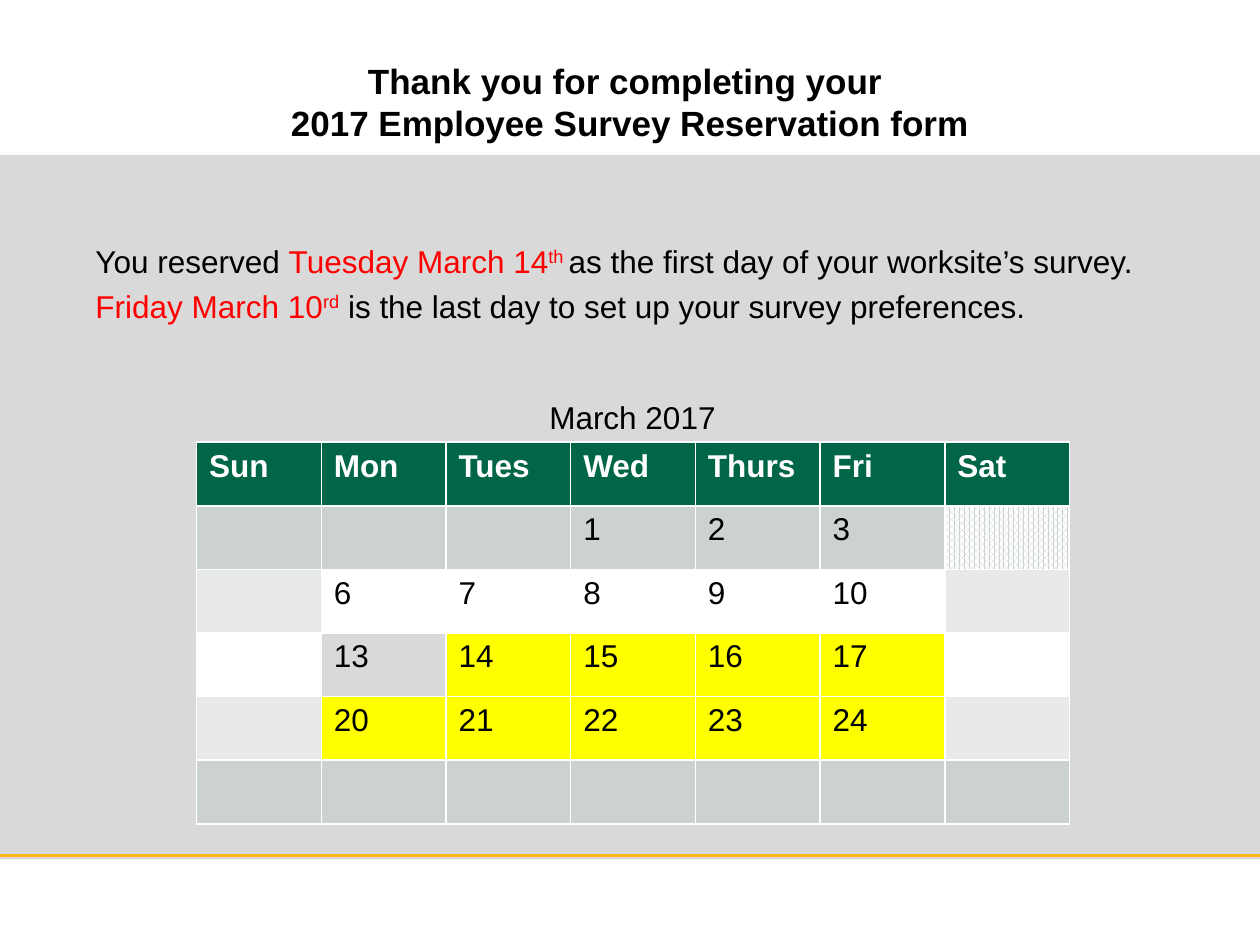
import pptx
import pptx.util
import pptx.dml.color
import pptx.enum.dml
import pptx.enum.shapes
import pptx.enum.text
from dataclasses import dataclass
from lxml import etree

Pt = pptx.util.Pt
Align = pptx.enum.text.PP_ALIGN
Anchor = pptx.enum.text.MSO_ANCHOR


@dataclass(frozen=True)
class Theme:
    font: str = "Arial"
    head: int = 20
    body: int = 18
    black: str = "000000"
    white: str = "FFFFFF"
    red: str = "FF0000"
    gray: str = "D9D9D9"
    gold: str = "FFB819"
    green: str = "016647"
    sage: str = "CCD3CF"
    pale: str = "E7EAE9"
    yellow: str = "FFFF00"


def rgb(color):
    return pptx.dml.color.RGBColor.from_string(color)


class Page:
    """A slide on a grid of 100 columns by 75 rows."""

    def __init__(self, deck, theme):
        self.theme = theme
        self.unit = deck.slide_width / 100
        self.slide = deck.slides.add_slide(deck.slide_layouts[5])
        self.shapes = self.slide.shapes

    def grid(self, *cells):
        return [round(cell * self.unit) for cell in cells]

    def style(self, para, size, color, bold=False, align=None):
        font = para.font
        font.name, font.size, font.bold = self.theme.font, Pt(size), bold
        font.color.rgb = rgb(color)
        para.alignment = align

    def title(self, text, *area):
        box = self.shapes.title
        box.left, box.top, box.width, box.height = self.grid(*area)
        frame = box.text_frame
        frame.text = text
        frame.auto_size = pptx.enum.text.MSO_AUTO_SIZE.NONE
        frame.vertical_anchor = Anchor.BOTTOM
        self.style(frame.paragraphs[0], self.theme.head, self.theme.black,
                   True, Align.CENTER)

    def panel(self, color, *area):
        kind = pptx.enum.shapes.MSO_SHAPE.RECTANGLE
        box = self.shapes.add_shape(kind, *self.grid(*area))
        box.shadow.inherit = False
        box.fill.solid()
        box.fill.fore_color.rgb = rgb(color)
        box.line.fill.background()

    def rule(self, color, width, *ends):
        kind = pptx.enum.shapes.MSO_CONNECTOR.STRAIGHT
        line = self.shapes.add_connector(kind, *self.grid(*ends))
        line.line.color.rgb = rgb(color)
        line.line.width = Pt(width)
        etree.SubElement(line._element.spPr, pptx.oxml.ns.qn("a:effectLst"))

    def text(self, paras, *area, align=None, inset=1, gap=0):
        """Each paragraph is a list of (text, color, raised) runs."""
        frame = self.shapes.add_textbox(*self.grid(*area)).text_frame
        frame.word_wrap = True
        frame.margin_left, frame.margin_right = self.grid(inset, inset)
        for i, runs in enumerate(paras):
            para = frame.add_paragraph() if i else frame.paragraphs[0]
            if i:
                para.space_before = Pt(gap)
            self.style(para, self.theme.body, self.theme.black, align=align)
            for words, color, raised in runs:
                run = para.add_run()
                run.text = words
                run.font.color.rgb = rgb(color)
                if raised:
                    run.font._element.set("baseline", "30000")

    def table(self, rows, fills, *area):
        grid = self.shapes.add_table(len(rows), len(rows[0]),
                                     *self.grid(*area)).table
        for r, row in enumerate(rows):
            for c, words in enumerate(row):
                cell = grid.cell(r, c)
                cell.text = words
                color = self.theme.black if r else self.theme.white
                self.style(cell.text_frame.paragraphs[0], self.theme.body,
                           color, bold=r == 0)
                self.paint(cell.fill, fills[r][c])

    def paint(self, fill, color):
        if color is None:
            fill.background()
        elif color == "dots":
            fill.patterned()
            fill.pattern = pptx.enum.dml.MSO_PATTERN.PERCENT_75
            fill.fore_color.rgb = rgb(self.theme.sage)
            fill.back_color.rgb = rgb(self.theme.white)
        else:
            fill.solid()
            fill.fore_color.rgb = rgb(color)


def main():
    deck = pptx.Presentation()
    deck.slide_width = pptx.util.Inches(10)
    deck.slide_height = pptx.util.Inches(7.5)
    look = Theme()
    page = Page(deck, look)

    # Backdrop and heading
    page.panel(look.gray, 0, 12.3, 100, 55.9)
    page.rule(look.gold, 1.5, 0, 67.9, 100, 67.9)
    page.title("Thank you for completing your \v"
               "2017 Employee Survey Reservation form", 5, 4.6, 90, 7.3)

    # Reservation dates
    page.text([
        [("You reserved ", look.black, False),
         ("Tuesday March 14", look.red, False),
         ("th ", look.red, True),
         ("as the first day of your worksite’s survey.", look.black, False)],
        [("Friday March 10", look.red, False),
         ("rd", look.red, True),
         (" is the last day to set up your survey preferences.",
          look.black, False)],
    ], 6.6, 18.7, 91.6, 9.6, gap=4)

    # Calendar: weekdays run Monday to Friday, weekends stay blank
    days = ["Sun", "Mon", "Tues", "Wed", "Thurs", "Fri", "Sat"]
    weeks = [[""] * 3 + ["1", "2", "3", ""]]
    for first in (6, 13, 20):
        weeks.append(["", *map(str, range(first, first + 5)), ""])
    weeks.append([""] * 7)
    fills = [
        [look.green] * 7,
        [look.sage] * 6 + ["dots"],
        [look.pale] + [look.white] * 5 + [look.pale],
        [look.white, None] + [look.yellow] * 4 + [look.white],
        [look.pale] + [look.yellow] * 5 + [look.pale],
        [look.sage] * 7,
    ]
    page.table([days] + weeks, fills, 15.6, 35.1, 69.3, 30.3)
    page.text([[("March 2017", look.black, False)]], 36.3, 31.1, 27.8, 4,
              align=Align.CENTER)

    deck.save("out.pptx")


if __name__ == "__main__":
    main()
